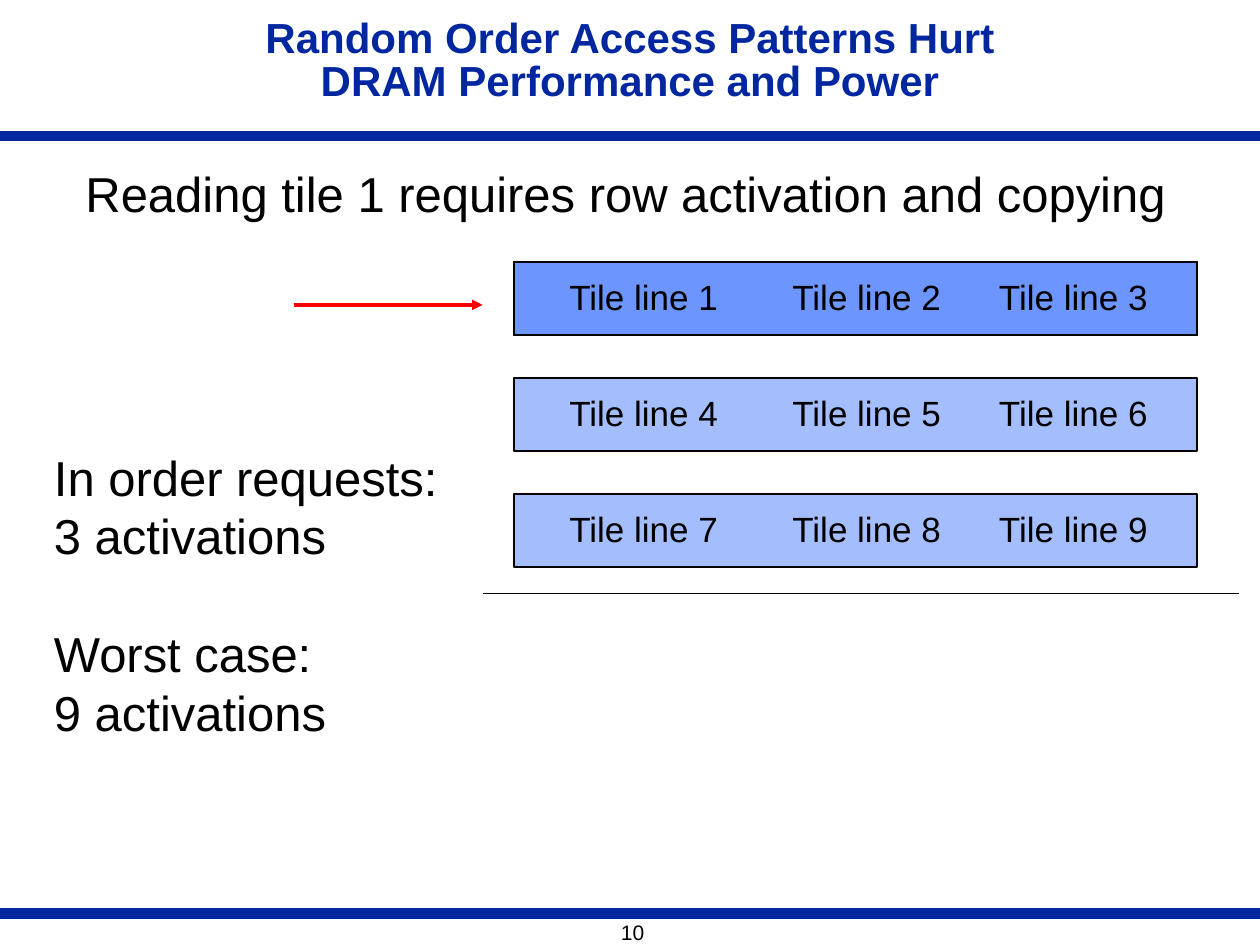
from dataclasses import dataclass

from lxml.etree import SubElement
from pptx import Presentation
from pptx.dml.color import RGBColor
from pptx.enum.shapes import MSO_CONNECTOR, MSO_SHAPE
from pptx.enum.text import MSO_ANCHOR as Anchor, PP_ALIGN as Align
from pptx.oxml.ns import qn
from pptx.util import Inches, Pt

NAVY = RGBColor(0x00, 0x27, 0x9F)
BLUE = RGBColor(0x61, 0x8F, 0xFD)
RED = RGBColor(0xFF, 0x00, 0x00)
BLACK = RGBColor(0x00, 0x00, 0x00)

ROW_LEFT, ROW_TOP, ROW_WIDTH, ROW_HEIGHT = 4.08, 2.08, 5.42, 0.58
ROW_PITCH = 0.92
TILE_LEFTS = (4.42, 6.19, 7.83)


@dataclass
class Line:
    start: tuple[float, float]
    end: tuple[float, float]
    color: RGBColor
    width: float
    arrow: bool = False


@dataclass
class Label:
    lines: tuple[str, ...]
    at: tuple[float, float, float, float]
    size: float
    wrap: bool = False
    bold: bool = False
    color: RGBColor = BLACK
    align: Align = Align.LEFT
    anchor: Anchor = Anchor.TOP
    spacing: float = 1.0
    gap_before: int | None = None  # index of the line that opens a new group


RULES = (
    Line((10, 7.25), (0, 7.25), NAVY, 6),
    Line((10, 1.08), (0, 1.08), NAVY, 6.13),
    Line((2.33, 2.42), (3.83, 2.42), RED, 2, arrow=True),
    Line((3.83, 4.71), (9.83, 4.71), BLACK, 1),
)
LABELS = (
    Label(("10",), (4.83, 7.25, 0.42, 0.3), 12, wrap=True),
    Label(("Random Order Access Patterns Hurt DRAM Performance and Power",),
          (1.75, 0.08, 6.5, 0.83), 24, wrap=True, bold=True, color=NAVY,
          align=Align.CENTER, anchor=Anchor.MIDDLE, spacing=0.85),
    Label(("Reading tile 1 requires row activation and copying",),
          (0.58, 1.25, 8.87, 0.57), 28),
    Label(("In order requests:", "3 activations", "Worst case:", "9 activations"),
          (0.33, 3.5, 3.28, 2.46), 28, gap_before=2),
)
# Opacity percentages of the layers in each memory row; the open row is darker.
ROW_LAYERS = ((42, 70, 58), (58,), (58,))


def add_line(slide, line: Line) -> None:
    ends = [Inches(value) for value in (*line.start, *line.end)]
    connector = slide.shapes.add_connector(MSO_CONNECTOR.STRAIGHT, *ends)
    connector.line.color.rgb = line.color
    connector.line.width = Pt(line.width)
    if line.arrow:
        SubElement(connector.line._get_or_add_ln(), qn("a:tailEnd"), type="triangle")
    SubElement(connector._element.spPr, qn("a:effectLst"))


def add_label(slide, label: Label) -> None:
    box = slide.shapes.add_textbox(*map(Inches, label.at))
    frame = box.text_frame
    frame.word_wrap = label.wrap
    frame.vertical_anchor = label.anchor
    font_format = {"name": "Arial", "size": Pt(label.size), "bold": label.bold}
    for index, text in enumerate(label.lines):
        para = frame.add_paragraph() if index else frame.paragraphs[0]
        para.alignment = label.align
        para.line_spacing = label.spacing
        if index == label.gap_before:
            para.space_before = Pt(label.size * 1.2)
        span = para.add_run()
        span.text = text
        for name, value in font_format.items():
            setattr(span.font, name, value)
        span.font.color.rgb = label.color


def add_row_layer(slide, top: float, opacity: int) -> None:
    at = map(Inches, (ROW_LEFT, top, ROW_WIDTH, ROW_HEIGHT))
    bar = slide.shapes.add_shape(MSO_SHAPE.RECTANGLE, *at)
    bar.shadow.inherit = False
    bar.fill.solid()
    bar.fill.fore_color.rgb = BLUE
    color = bar._element.spPr.find(qn("a:solidFill")).find(qn("a:srgbClr"))
    SubElement(color, qn("a:alpha"), val=str(opacity * 1000))
    bar.line.color.rgb = BLACK
    bar.line.width = Pt(1)


def main() -> None:
    deck = Presentation()
    deck.slide_width, deck.slide_height = Inches(10), Inches(7.5)
    slide = deck.slides.add_slide(deck.slide_layouts[6])
    for line in RULES:
        add_line(slide, line)
    for label in LABELS:
        add_label(slide, label)
    for row, layers in enumerate(ROW_LAYERS):
        top = ROW_TOP + row * ROW_PITCH
        for opacity in layers:
            add_row_layer(slide, top, opacity)
        for column, left in enumerate(TILE_LEFTS):
            number = row * len(TILE_LEFTS) + column + 1
            add_label(slide, Label((f"Tile line {number}",),
                                   (left, top + 0.06, 1.39, 0.44), 20))
    deck.save("out.pptx")


if __name__ == "__main__":
    main()
